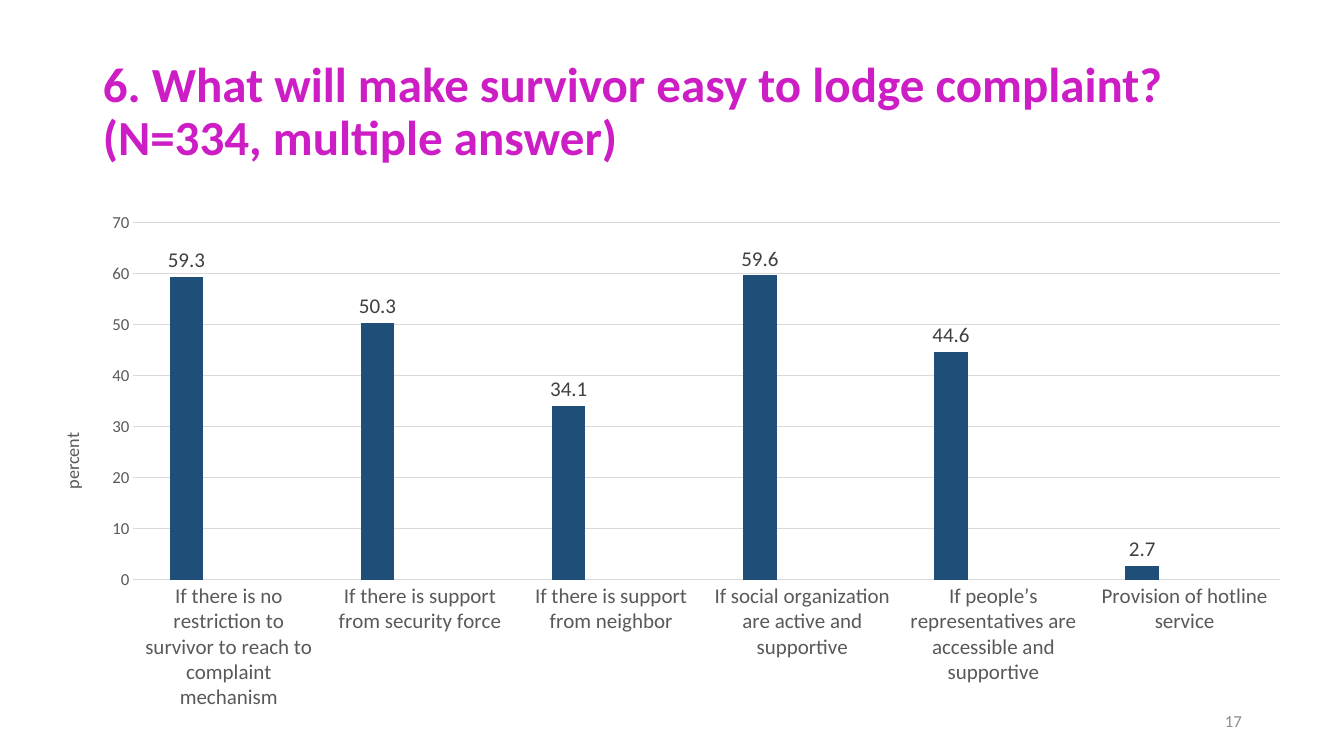
from lxml import etree
from pptx import Presentation, util as u
from pptx.chart.data import CategoryChartData
from pptx.dml.color import RGBColor
from pptx.enum import chart as ch, text
from pptx.oxml.ns import qn

MAGENTA = RGBColor(0xCD, 0x1D, 0xC5)
NAVY = RGBColor(0x1F, 0x4E, 0x79)
ORANGE = RGBColor(0xED, 0x7D, 0x31)
SILVER = RGBColor(0xA5, 0xA5, 0xA5)
LABEL = RGBColor(0x40, 0x40, 0x40)
AXIS = RGBColor(0x59, 0x59, 0x59)
GRID = RGBColor(0xD9, 0xD9, 0xD9)
PAGE = RGBColor(0x8C, 0x8C, 0x8C)

WIDTH, HEIGHT = 13.33, 7.5
ANSWERS = [
    ("If there is no restriction to survivor to reach to complaint mechanism", 59.3),
    ("If there is support from security force", 50.3),
    ("If there is support from neighbor", 34.1),
    ("If social organization are active and supportive", 59.6),
    ("If people’s representatives are accessible and supportive", 44.6),
    ("Provision of hotline service", 2.7),
]
# Series 2 and 3 hold no values but keep their place beside each column.
SERIES = [
    ("Series 1", [value for _, value in ANSWERS], NAVY, 15),
    ("Series 2", [None] * len(ANSWERS), ORANGE, 12),
    ("Series 3", [None] * len(ANSWERS), SILVER, 12),
]


class SurveySlide:
    """Style and current slide; boxes are percentages of the slide's size."""

    font = "Calibri"

    def __init__(self, prs):
        self.prs = prs
        self.s = prs.slides.add_slide(prs.slide_layouts[5])

    def box(self, x, y, w, h):
        across, down = self.prs.slide_width / 100, self.prs.slide_height / 100
        return int(x * across), int(y * down), int(w * across), int(h * down)

    def style(self, font, size, color, bold=False):
        font.name, font.size, font.bold = self.font, u.Pt(size), bold
        font.color.rgb = color

    def fill_text(self, sp, words, size, color, bold=False, align=text.PP_ALIGN.LEFT):
        tf = sp.text_frame
        tf.word_wrap = True
        tf.auto_size = text.MSO_AUTO_SIZE.NONE
        tf.vertical_anchor = text.MSO_ANCHOR.MIDDLE
        p = tf.paragraphs[0]
        p.alignment = align
        r = p.add_run()
        r.text = words
        self.style(r.font, size, color, bold)
        return p

    def title(self, words, *box):
        sp = self.s.shapes.title
        sp.left, sp.top, sp.width, sp.height = self.box(*box)
        self.fill_text(sp, words, 35, MAGENTA, True).line_spacing = 0.9

    def page_number(self, words, *box):
        sp = self.s.shapes.add_textbox(*self.box(*box))
        self.fill_text(sp, words, 12, PAGE, align=text.PP_ALIGN.RIGHT)

    def place(self, parent, index, **shares):
        """Set a manual layout, in shares of the chart, on a chart part."""
        for old in parent.findall(qn("c:layout")):
            parent.remove(old)
        layout = etree.Element(qn("c:layout"))
        parent.insert(index, layout)
        manual = etree.SubElement(layout, qn("c:manualLayout"))
        if "w" in shares:
            etree.SubElement(manual, qn("c:layoutTarget")).set("val", "inner")
        for mode in ("xMode", "yMode"):
            etree.SubElement(manual, qn(f"c:{mode}")).set("val", "edge")
        for name, share in shares.items():
            etree.SubElement(manual, qn(f"c:{name}")).set("val", str(share))

    def column_chart(self, categories, series, *box):
        data = CategoryChartData()
        data.categories = categories
        for name, values, _, _ in series:
            data.add_series(name, values)
        kind = ch.XL_CHART_TYPE.COLUMN_CLUSTERED
        chart = self.s.shapes.add_chart(kind, *self.box(*box), data).chart
        chart.has_legend = chart.has_title = False
        self.style(chart.font, 10, AXIS)
        plot = chart.plots[0]
        plot.gap_width, plot.overlap, plot.vary_by_categories = 219, -27, False
        for ser, (_, _, color, size) in zip(plot.series, series):
            ser.format.fill.solid()
            ser.format.fill.fore_color.rgb = color
            labels = ser.data_labels
            labels.show_value = True
            labels.position = ch.XL_LABEL_POSITION.OUTSIDE_END
            self.style(labels.font, size, LABEL)
        self.place(chart.element.find(".//" + qn("c:plotArea")), 0,
                   x=0.08, y=0.04, w=0.9, h=0.69)
        self.axes(chart.category_axis, chart.value_axis)

    def axes(self, cat, val):
        for axis, size in ((cat, 15), (val, 12)):
            axis.major_tick_mark = axis.minor_tick_mark = ch.XL_TICK_MARK.NONE
            self.style(axis.tick_labels.font, size, AXIS)
        val.minimum_scale, val.maximum_scale, val.major_unit = 0, 70, 10
        val.format.line.fill.background()
        for line in (cat.format.line, val.major_gridlines.format.line):
            line.color.rgb, line.width = GRID, u.Pt(0.75)
        r = val.axis_title.text_frame.paragraphs[0].add_run()
        r.text = "percent"
        self.style(r.font, 13, AXIS)
        self.place(val.axis_title.element, 1, x=0.02, y=0.44)


def main():
    prs = Presentation()
    prs.slide_width, prs.slide_height = u.Inches(WIDTH), u.Inches(HEIGHT)
    slide = SurveySlide(prs)
    slide.title("6. What will make survivor easy to lodge complaint? "
                "(N=334, multiple answer)", 6.9, 5.33, 86.25, 19.33)
    slide.column_chart([answer for answer, _ in ANSWERS], SERIES,
                       2.33, 26.67, 94.82, 68.53)
    slide.page_number("17", 70.65, 92.67, 22.5, 5.33)
    prs.save("out.pptx")


if __name__ == "__main__":
    main()
